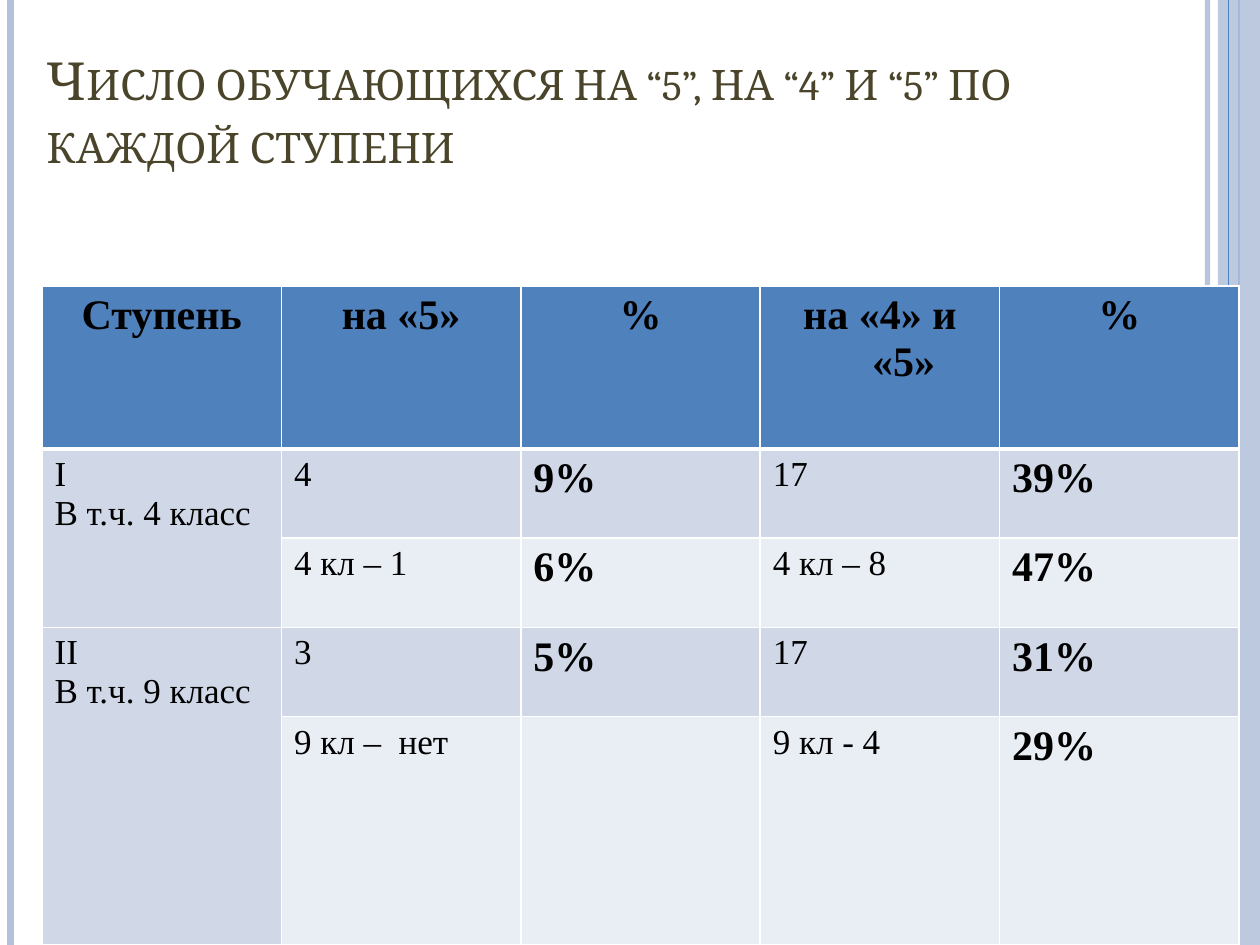
from pptx import Presentation
from pptx.dml.color import RGBColor
from pptx.enum.shapes import MSO_CONNECTOR, MSO_SHAPE
from pptx.enum.text import MSO_ANCHOR, MSO_AUTO_SIZE, PP_ALIGN
from pptx.oxml.ns import qn
from pptx.oxml.xmlchemy import OxmlElement
from pptx.util import Pt

COLORS = {"rail": "B3C1DB", "accent": "4F81BD", "title": "4A452A", "text": "000000",
          "border": "FFFFFF", "header": "4F81BD", "odd": "D0D8E8", "even": "E9EDF4"}
RAILS = [(690, "rail", 3, 93), (6, "rail", 4.5, 100), (708, "accent", 1.5, 100)]
INNER_RAIL = (702, "accent", 0.75, 100)
TITLE = "Число обучающихся на “5”, на “4” и “5” по каждой ступени"
HEADERS = ["Ступень", "на «5»", "%", "на «4» и «5»", "%"]
ROWS = [
    ["I\nВ т.ч. 4 класс", "4", "9%", "17", "39%"],
    ["", "4 кл – 1", "6%", "4 кл – 8", "47%"],
    ["II\nВ т.ч. 9 класс", "3", "5%", "17", "31%"],
    ["", "9 кл –  нет", "", "9 кл - 4", "29%"],
]
ROW_HEIGHTS = [93, 51, 51, 51, 130.5]
HANGING = 27
BIG = {"size": Pt(24), "bold": True}
PLAIN = {"size": Pt(20), "bold": False}


def color(name):
    """Return the named colour."""
    return RGBColor.from_string(COLORS[name])


def apply_format(target, values):
    """Set every attribute in values on target."""
    for name, value in values.items():
        setattr(target, name, value)


def set_opacity(shape, percent):
    """Make the colours of a shape partly transparent."""
    for node in shape._element.spPr.iter(qn("a:srgbClr")):
        alpha = OxmlElement("a:alpha")
        alpha.set("val", str(percent * 1000))
        node.append(alpha)


def add_rail(page, x, color_name, width, opacity, height):
    """Draw one vertical line over the full height of the page."""
    rail = page.shapes.add_connector(MSO_CONNECTOR.STRAIGHT, Pt(x), 0, Pt(x), Pt(height))
    rail.line.color.rgb = color(color_name)
    rail.line.width = Pt(width)
    if opacity < 100:
        set_opacity(rail, opacity)
    rail._element.spPr.append(OxmlElement("a:effectLst"))


def add_side_bars(page, width, height):
    """Draw the rails and the band at the sides of the page."""
    for rail in RAILS:
        add_rail(page, *rail, height)
    band = page.shapes.add_shape(MSO_SHAPE.RECTANGLE, Pt(width - 24), 0, Pt(24), Pt(height))
    band.shadow.inherit = False
    band.fill.solid()
    band.fill.fore_color.rgb = color("rail")
    band.line.fill.background()
    set_opacity(band, 87)
    add_rail(page, *INNER_RAIL, height)


def place_title(page, left, top, width, height):
    """Place and format the title placeholder."""
    title = page.shapes.title
    apply_format(title, {"left": Pt(left), "top": Pt(top), "width": Pt(width), "height": Pt(height)})
    frame = title.text_frame
    apply_format(frame, {"text": TITLE, "word_wrap": True, "auto_size": MSO_AUTO_SIZE.NONE,
                         "vertical_anchor": MSO_ANCHOR.BOTTOM})
    para = frame.paragraphs[0]
    para.alignment = PP_ALIGN.LEFT
    span = para.runs[0]
    apply_format(span.font, {"name": "Cambria", "size": Pt(30), "bold": False})
    span.font.color.rgb = color("title")
    span._r.get_or_add_rPr().set("cap", "small")


def set_borders(cell, widths):
    """Draw the cell borders, given widths by side."""
    properties = cell._tc.get_or_add_tcPr()
    for side, width in widths.items():
        line = OxmlElement(f"a:ln{side}")
        line.set("w", str(Pt(width)))
        fill = OxmlElement("a:solidFill")
        tint = OxmlElement("a:srgbClr")
        tint.set("val", COLORS["border"])
        fill.append(tint)
        line.append(fill)
        properties.append(line)


def fill_cell(cell, text, values, alignment, fill_name, widths):
    """Write and format one table cell."""
    set_borders(cell, widths)
    cell.fill.solid()
    cell.fill.fore_color.rgb = color(fill_name)
    cell.text = text
    for para in cell.text_frame.paragraphs:
        para.alignment = alignment
        indents = para._p.get_or_add_pPr()
        indents.set("marL", str(Pt(HANGING)))
        indents.set("indent", str(-Pt(HANGING)))
        apply_format(para.font, values)
        for span in para.runs:
            apply_format(span.font, {"name": "Times New Roman", **values})
            span.font.color.rgb = color("text")


def add_results_table(page, left, top, width):
    """Build the table of pupils by school stage."""
    frame = page.shapes.add_table(len(ROWS) + 1, len(HEADERS), Pt(left), Pt(top),
                                  Pt(width), Pt(sum(ROW_HEIGHTS)))
    table = frame.table
    apply_format(table, {"first_row": False, "horz_banding": False})
    for row, height in zip(table.rows, ROW_HEIGHTS):
        row.height = Pt(height)
    thin = dict.fromkeys("LRTB", 1)
    for column, text in enumerate(HEADERS):
        fill_cell(table.cell(0, column), text, BIG, PP_ALIGN.CENTER, "header", {**thin, "B": 3})
    for index, texts in enumerate(ROWS, 1):
        for column, text in enumerate(texts):
            values = BIG if HEADERS[column] == "%" else PLAIN
            fill_name = "odd" if index % 2 or column == 0 else "even"
            widths = {**thin, "T": 3} if index == 1 else thin
            fill_cell(table.cell(index, column), text, values, PP_ALIGN.JUSTIFY, fill_name, widths)
    for first in range(1, len(ROWS), 2):
        table.cell(first, 0).merge(table.cell(first + 1, 0))


def main():
    """Build and save the deck."""
    width, height = 720, 540
    deck = Presentation()
    apply_format(deck, {"slide_width": Pt(width), "slide_height": Pt(height)})
    page = deck.slides.add_slide(deck.slide_layouts[5])
    add_side_bars(page, width, height)
    place_title(page, 19.5, 20, 672, 83)
    add_results_table(page, 24, 163.5, 684)
    deck.save("out.pptx")


if __name__ == "__main__":
    main()
